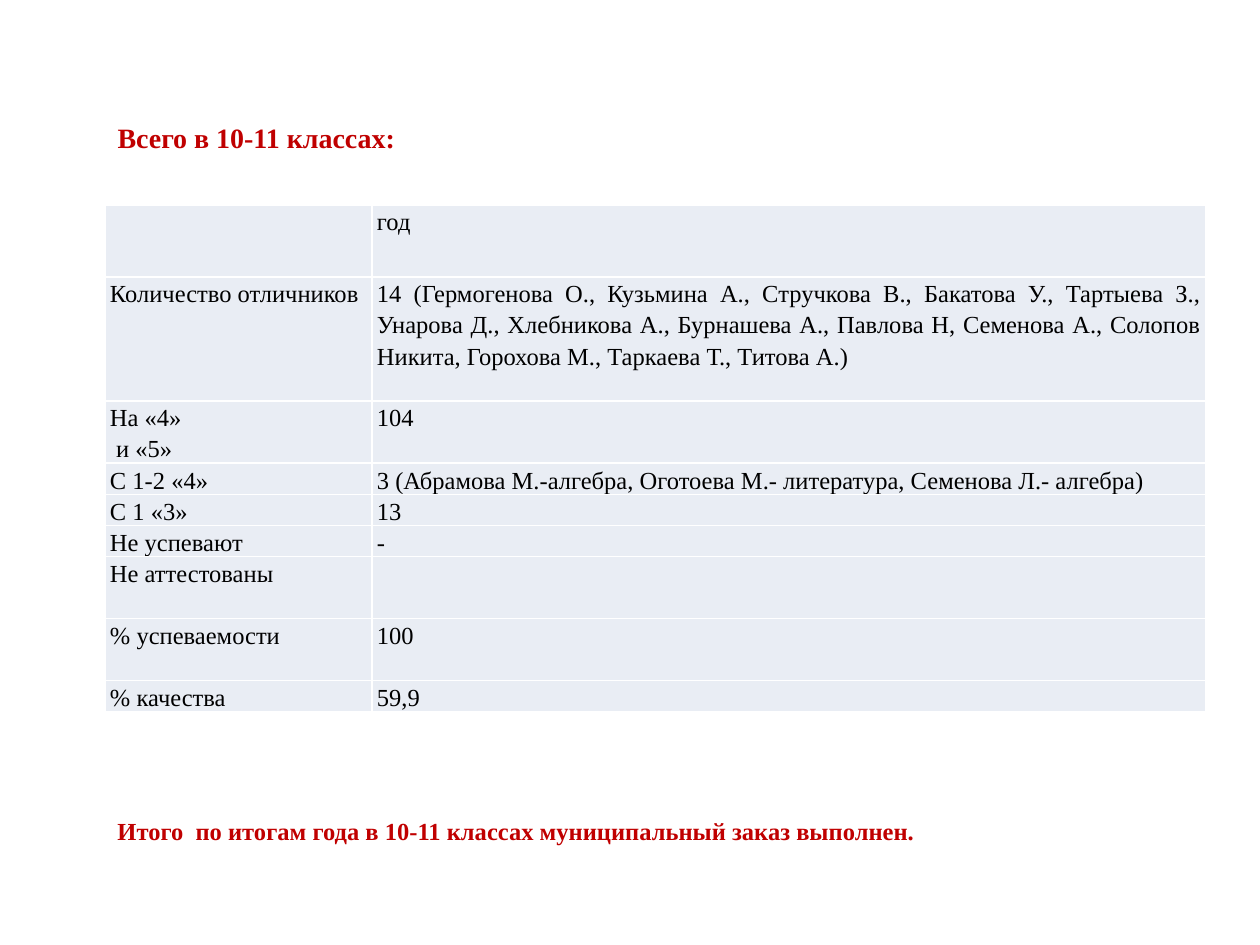
"""Build the slide with the results table for grades 10-11."""
from lxml import etree
from pptx import Presentation
from pptx.dml.color import RGBColor
from pptx.enum.text import MSO_ANCHOR, PP_ALIGN
from pptx.oxml.ns import qn
from pptx.util import Pt

LEFT, JUST = PP_ALIGN.LEFT, PP_ALIGN.JUSTIFY
MIDDLE, TOP = MSO_ANCHOR.MIDDLE, MSO_ANCHOR.TOP
PX = 914400 // 126

THEME = {
    "font": "Times New Roman",
    "head": 16,
    "body": 14,
    "red": RGBColor(0xC0, 0, 0),
    "ink": RGBColor(0, 0, 0),
    "fill": RGBColor(0xE9, 0xED, 0xF4),
    "rule": "FFFFFF",
}

TITLE = "Всего в 10-11 классах:"
TOTAL = "Итого  по итогам года в 10-11 классах муниципальный заказ выполнен."
ROWS = [
    (72, "", "год"),
    (124, "Количество отличников",
     "14 (Гермогенова О., Кузьмина А., Стручкова В., Бакатова У., "
     "Тартыева З., Унарова Д., Хлебникова А., Бурнашева А., Павлова Н, "
     "Семенова А., Солопов Никита, Горохова М., Таркаева Т., Титова А.)"),
    (62, "На «4»\n и «5»", "104"),
    (31, "С 1-2 «4»",
     "3 (Абрамова М.-алгебра, Оготоева М.- литература, "
     "Семенова Л.- алгебра)"),
    (31, "С 1 «3»", "13"),
    (31, "Не успевают", "-"),
    (62, "Не аттестованы", ""),
    (62, "% успеваемости", "100"),
    (31, "% качества", "59,9"),
]
COLS = (267, 834)
TABLE_AT = (105, 205)
TITLE_AT = (105, 114, 942, 47)
TOTAL_AT = (105, 810, 1032, 43)


def scale(*sizes):
    return [size * PX for size in sizes]


def style(frame, size, color, bold, align):
    for para in frame.paragraphs:
        para.alignment = align
        for run in para.runs:
            font = run.font
            font.name, font.size, font.bold = THEME["font"], Pt(size), bold
            font.color.rgb = color


def label(shape, text, box, size, anchor):
    shape.left, shape.top, shape.width, shape.height = scale(*box)
    frame = shape.text_frame
    frame.word_wrap = True
    frame.vertical_anchor = anchor
    frame.text = text
    style(frame, size, THEME["red"], True, LEFT)


def border(cell):
    props = cell._tc.get_or_add_tcPr()
    for spot, side in enumerate(("lnL", "lnR", "lnT", "lnB")):
        line = etree.Element(qn("a:" + side), w=str(Pt(1)))
        fill = etree.SubElement(line, qn("a:solidFill"))
        etree.SubElement(fill, qn("a:srgbClr"), val=THEME["rule"])
        props.insert(spot, line)


def fill_cell(cell, text):
    cell.margin_left = cell.margin_right = 5 * PX
    cell.margin_top = cell.margin_bottom = 0
    cell.fill.solid()
    cell.fill.fore_color.rgb = THEME["fill"]
    border(cell)
    cell.text = text
    style(cell.text_frame, THEME["body"], THEME["ink"], False, JUST)
    for para in cell.text_frame.paragraphs:
        para.line_spacing = 1.15


def add_grid(slide):
    high = sum(row[0] for row in ROWS)
    box = scale(*TABLE_AT, sum(COLS), high)
    table = slide.shapes.add_table(len(ROWS), len(COLS), *box).table
    table.first_row = table.horz_banding = False
    for col, width in zip(table.columns, COLS):
        col.width = width * PX
    for row, (height, *texts) in zip(table.rows, ROWS):
        row.height = height * PX
        for cell, text in zip(row.cells, texts):
            fill_cell(cell, text)


def main():
    deck = Presentation()
    deck.slide_width, deck.slide_height = scale(1260, 945)
    slide = deck.slides.add_slide(deck.slide_layouts[5])
    add_grid(slide)
    label(slide.shapes.title, TITLE, TITLE_AT, THEME["head"], MIDDLE)
    note = slide.shapes.add_textbox(*scale(*TOTAL_AT))
    label(note, TOTAL, TOTAL_AT, THEME["body"], TOP)
    deck.save("out.pptx")


if __name__ == "__main__":
    main()
